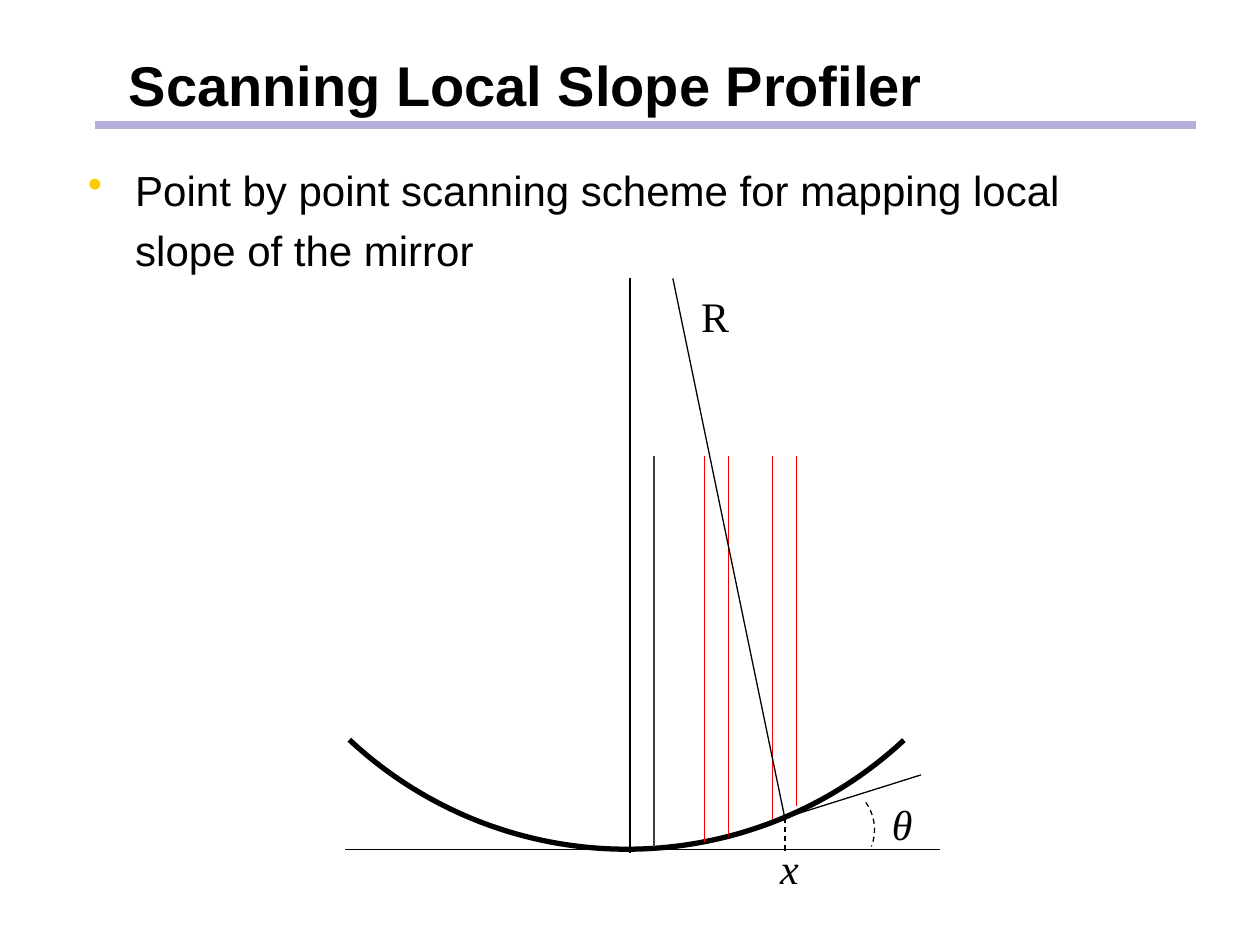
"""Build the slide on the scanning local slope profiler."""
from lxml import etree
from pptx import Presentation
from pptx import util as u
from pptx.dml.color import RGBColor
from pptx.enum import dml, shapes, text
from pptx.oxml.ns import qn

BLACK, RED, GREY = "000000", "FF0000", "404040"


def rgb(color):
    return RGBColor.from_string(color)


def style_line(line, color, width, dashed):
    line.color.rgb = rgb(color)
    line.width = u.Pt(width)
    if dashed:
        line.dash_style = dml.MSO_LINE.DASH


def add_line(s, x1, y1, x2, y2, color=BLACK, width=0.75, dashed=False):
    ends = [u.Pt(v) for v in (x1, y1, x2, y2)]
    sp = s.shapes.add_connector(shapes.MSO_CONNECTOR.STRAIGHT, *ends)
    style_line(sp.line, color, width, dashed)
    etree.SubElement(sp._element.spPr, qn("a:effectLst"))


def add_arc(s, left, top, size, start, end, width, dashed=False):
    sp = s.shapes.add_shape(shapes.MSO_SHAPE.ARC, u.Pt(left), u.Pt(top), u.Pt(size), u.Pt(size))
    sp.shadow.inherit = False
    sp.fill.background()
    style_line(sp.line, BLACK, width, dashed)
    sp.adjustments[0] = start * 0.6
    sp.adjustments[1] = end * 0.6
    return sp


def add_text(s, box, words, size, name="Arial", bold=False, italic=False,
             align=text.PP_ALIGN.CENTER, wrap=True, inset=3.6):
    tf = s.shapes.add_textbox(*[u.Pt(v) for v in box]).text_frame
    tf.word_wrap = wrap
    tf.margin_top = u.Pt(inset)
    p = tf.paragraphs[0]
    p.text = words
    p.alignment = align
    p.font.size, p.font.name = u.Pt(size), name
    p.font.bold, p.font.italic = bold, italic
    p.font.color.rgb = rgb(BLACK)
    return p


def add_bullet(p, indent, color):
    pPr = p._p.get_or_add_pPr()
    pPr.set("marL", str(u.Pt(indent)))
    pPr.set("indent", str(u.Pt(-indent)))
    bu = etree.Element(qn("a:buClr"))
    etree.SubElement(bu, qn("a:srgbClr"), val=color)
    char = etree.Element(qn("a:buChar"), char="•")
    pPr.find(qn("a:defRPr")).addprevious(bu)
    bu.addnext(char)


def add_label(s, left, top, width, words, italic=True):
    add_text(s, (left, top, width, 36), words, 24, "Times New Roman", italic=italic, wrap=False)


def add_mirror(s):
    mirror = add_arc(s, 126, 20.9, 464.4, 226.93, 312.99, 3)
    mirror._element.spPr.find(qn("a:xfrm")).set("flipV", "1")
    rays = [(360, 487.4, RED), (373.7, 483.8, GREY), (402.5, 481.7, RED),
            (416.2, 478.1, RED), (441.4, 468, RED), (455, 460.8, RED)]
    for x, bottom, color in rays:
        add_line(s, x, 260.6, x, bottom, color)


def add_geometry(s):
    add_line(s, 384.5, 159.1, 448.6, 468)
    add_line(s, 360, 487.4, 360, 159.1)
    add_line(s, 197.3, 485.3, 537.1, 485.3)
    add_line(s, 526.3, 442.8, 402.5, 481.7)
    add_arc(s, 445.7, 447.1, 54, 303.79, 0, 0.75, True).rotation = 20.9
    add_line(s, 448.6, 486, 448.6, 466.6, dashed=True)
    add_label(s, 393.1, 162.7, 31, "R", italic=False)
    add_label(s, 438.5, 478.1, 25.2, "x")
    add_label(s, 501.8, 452.9, 27.4, "θ")


def main():
    prs = Presentation()
    prs.slide_width, prs.slide_height = u.Pt(720), u.Pt(540)
    s = prs.slides.add_slide(prs.slide_layouts[6])
    add_line(s, 54, 71.3, 683.3, 71.3, "B7AEDC", 4.5)
    add_text(s, (36, 21.6, 529.2, 90), "Scanning Local Slope Profiler", 32, bold=True, inset=7.5)
    add_mirror(s)
    add_geometry(s)
    p = add_text(s, (43.2, 82.1, 621.4, 77),
                 "Point by point scanning scheme for mapping local slope of the mirror",
                 24, align=text.PP_ALIGN.LEFT, inset=6)
    p.line_spacing = 1.2
    add_bullet(p, 27, "FFCC00")
    prs.save("out.pptx")


if __name__ == "__main__":
    main()
